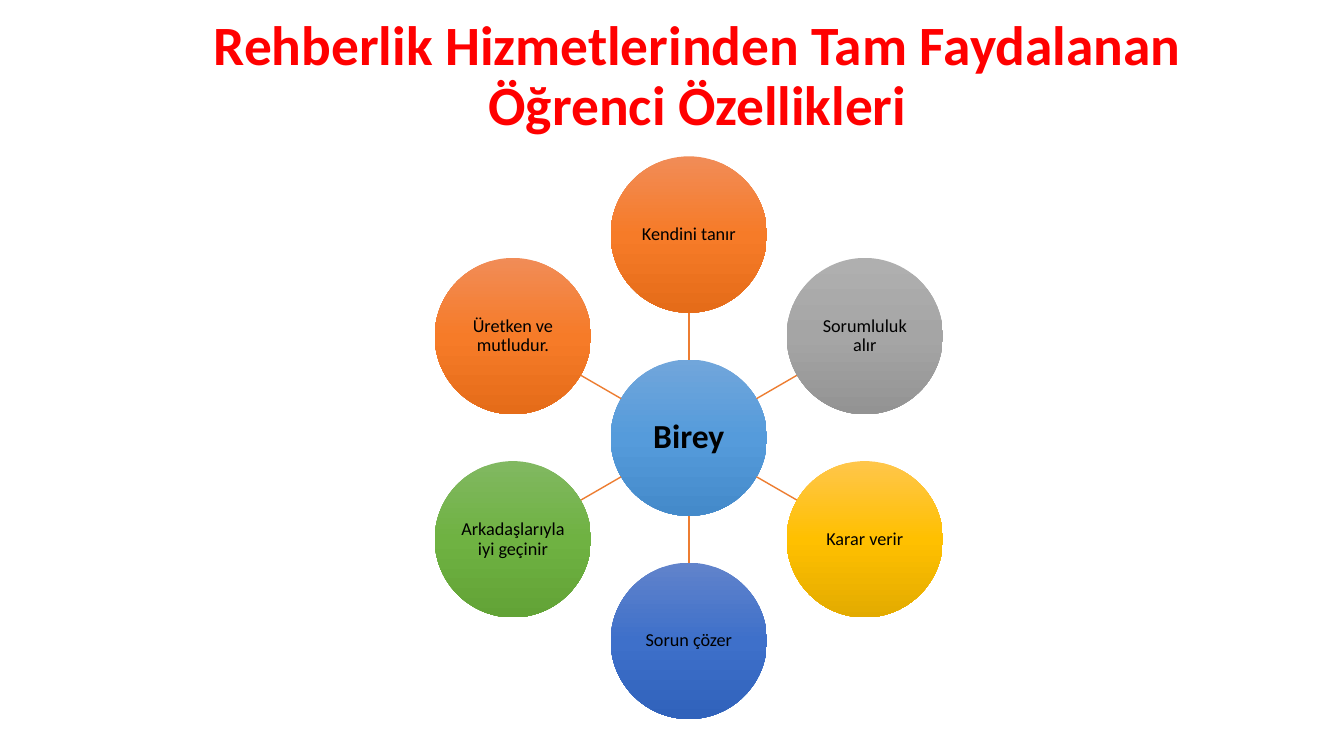
from copy import deepcopy
from math import cos, sin, radians

from lxml import etree
from pptx import Presentation
from pptx.dml.color import RGBColor as RGB
from pptx.enum.shapes import MSO_CONNECTOR as LINE, MSO_SHAPE as SHAPE
from pptx.enum.text import MSO_ANCHOR as ANCHOR, PP_ALIGN as ALIGN
from pptx.oxml.ns import qn
from pptx.util import Cm, Pt

RED = RGB(0xFF, 0x00, 0x00)
BLACK = RGB(0x00, 0x00, 0x00)
RAY = RGB(0xED, 0x7D, 0x31)

# Gradients from top to bottom
SKY = RGB(0x71, 0xA6, 0xDB), RGB(0x55, 0x9B, 0xDB), RGB(0x44, 0x8A, 0xCA)
ORANGE = RGB(0xF1, 0x8C, 0x57), RGB(0xF6, 0x7B, 0x28), RGB(0xE5, 0x6C, 0x19)
GREY = RGB(0xAF, 0xAF, 0xAF), RGB(0xA5, 0xA5, 0xA5), RGB(0x93, 0x93, 0x93)
GOLD = RGB(0xFF, 0xC6, 0x4B), RGB(0xFF, 0xC0, 0x00), RGB(0xE3, 0xAB, 0x00)
BLUE = RGB(0x61, 0x83, 0xCB), RGB(0x3E, 0x70, 0xCA), RGB(0x30, 0x62, 0xBB)
GREEN = RGB(0x81, 0xB8, 0x61), RGB(0x6F, 0xB2, 0x42), RGB(0x62, 0xA3, 0x36)

# Wheel geometry in centimetres
MID_X, MID_Y = 17.36, 11.03
REACH = 5.12
SIZE = 3.94

TRAITS = [
    ("Kendini tanır", ORANGE),
    ("Sorumluluk alır", GREY),
    ("Karar verir", GOLD),
    ("Sorun çözer", BLUE),
    ("Arkadaşlarıyla iyi geçinir", GREEN),
    ("Üretken ve mutludur.", ORANGE),
]


class Page:
    font = "Calibri"

    def __init__(self, slide):
        self.shapes = slide.shapes

    def label(self, shape, text, size, color, bold):
        frame = shape.text_frame
        frame.text = text
        frame.word_wrap = True
        frame.vertical_anchor = ANCHOR.MIDDLE
        para = frame.paragraphs[0]
        para.alignment = ALIGN.CENTER
        para.line_spacing = 0.9
        font = para.runs[0].font
        font.name, font.size, font.bold = self.font, Pt(size), bold
        font.color.rgb = color

    def title(self, text, left, top, width, height):
        box = self.shapes.add_textbox(Cm(left), Cm(top), Cm(width), Cm(height))
        self.label(box, text, 39.6, RED, True)

    def shade(self, shape, colors):
        """Fill with a vertical gradient of three evenly spaced colours."""
        fill = shape.fill
        fill.gradient()
        fill.gradient_angle = 270
        first = next(shape._element.iter(qn("a:gs")))
        first.addnext(deepcopy(first))
        for i, (stop, color) in enumerate(zip(fill.gradient_stops, colors)):
            stop.position = i / 2
            stop.color.rgb = color

    def disc(self, text, x, y, colors, size=13, bold=False):
        """Draw a labelled circle centred on x, y."""
        disc = self.shapes.add_shape(SHAPE.OVAL, Cm(x - SIZE / 2),
                                     Cm(y - SIZE / 2), Cm(SIZE), Cm(SIZE))
        disc.shadow.inherit = False
        disc.line.fill.background()
        self.shade(disc, colors)
        frame = disc.text_frame
        frame.margin_left = frame.margin_right = Cm(0.03)
        frame.margin_top = frame.margin_bottom = Cm(0.03)
        self.label(disc, text, size, BLACK, bold)

    def ray(self, x1, y1, x2, y2):
        ray = self.shapes.add_connector(LINE.STRAIGHT, Cm(x1), Cm(y1),
                                        Cm(x2), Cm(y2))
        ray.line.color.rgb = RAY
        ray.line.width = Pt(1)
        etree.SubElement(ray._element.spPr, qn("a:effectLst"))


def spot(angle, reach):
    """Return the point at this clockwise angle from the top of the wheel."""
    turn = radians(angle)
    return MID_X + reach * sin(turn), MID_Y - reach * cos(turn)


def main():
    deck = Presentation()
    deck.slide_width, deck.slide_height = Cm(33.87), Cm(19.05)
    page = Page(deck.slides.add_slide(deck.slide_layouts[6]))

    page.disc("Birey", MID_X, MID_Y, SKY, 24, True)
    for i, (text, colors) in enumerate(TRAITS):
        angle = i * 360 / len(TRAITS)
        page.ray(*spot(angle, SIZE / 2), *spot(angle, REACH - SIZE / 2))
        page.disc(text, *spot(angle, REACH), colors)
    page.title("Rehberlik Hizmetlerinden Tam Faydalanan Öğrenci Özellikleri",
               5.08, 0.91, 25, 2.11)

    deck.save("out.pptx")


if __name__ == "__main__":
    main()
